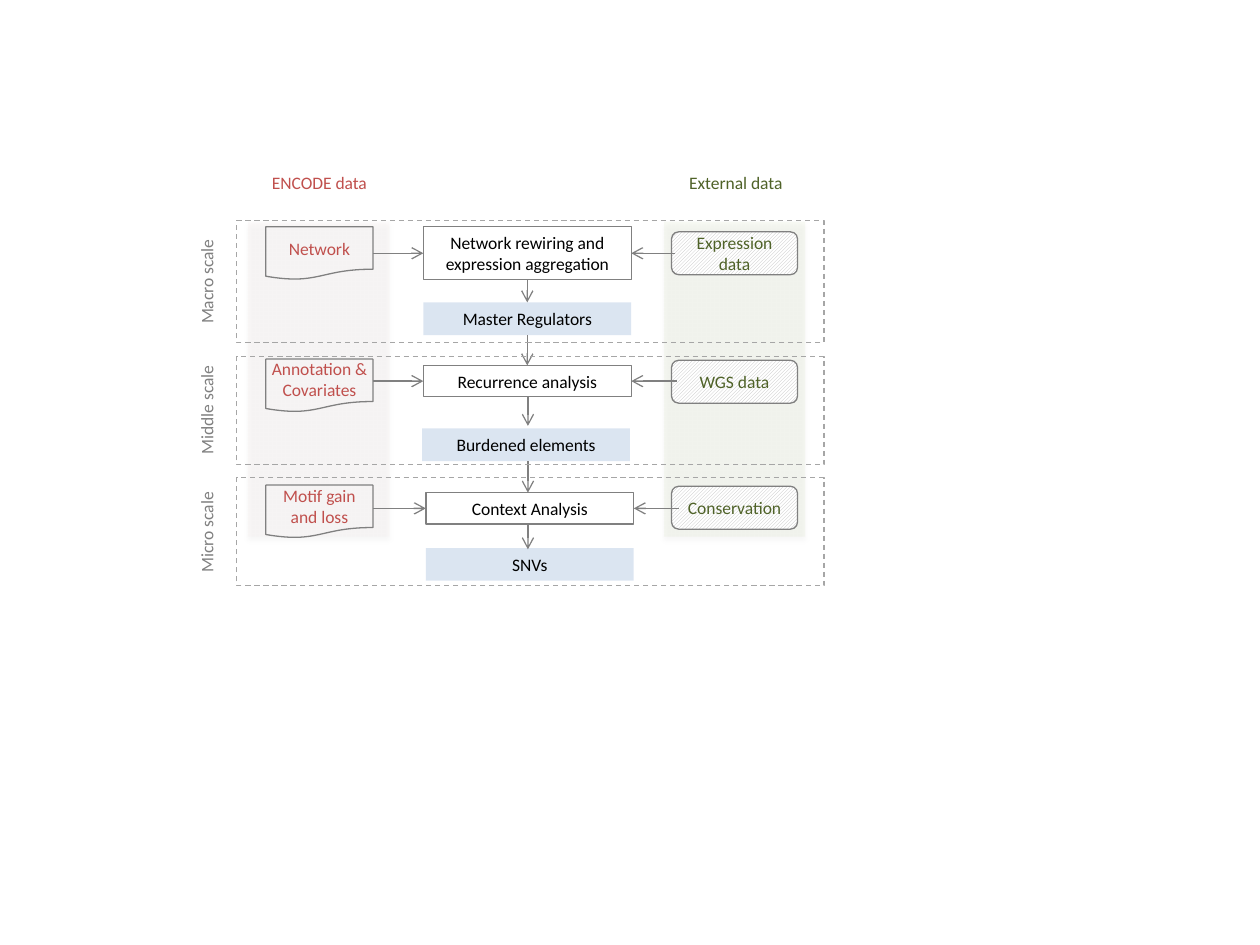
from dataclasses import dataclass
from typing import Optional

from lxml.etree import SubElement
from pptx import Presentation
from pptx.dml.color import RGBColor
from pptx.enum.dml import MSO_LINE, MSO_PATTERN
from pptx.enum.shapes import MSO_CONNECTOR, MSO_SHAPE
from pptx.enum.text import MSO_ANCHOR, MSO_AUTO_SIZE, PP_ALIGN
from pptx.oxml.ns import qn
from pptx.shapes.autoshape import Shape
from pptx.util import Inches, Pt

BLACK = RGBColor(0, 0, 0)
WHITE = RGBColor(255, 255, 255)
RED = RGBColor(0xC0, 0x50, 0x4D)
GREEN = RGBColor(0x4F, 0x62, 0x28)
GRAY = RGBColor(0x80, 0x80, 0x80)
SILVER = RGBColor(0xA6, 0xA6, 0xA6)
HATCH = RGBColor(0xBF, 0xBF, 0xBF)
BLUE = RGBColor(0xB9, 0xCD, 0xE5)
ROSE = RGBColor(0xF2, 0xDC, 0xDB)
LIME = RGBColor(0xC3, 0xD6, 0x9B)

TOP, LEFT, BOTTOM, RIGHT = range(4)
MID = 4.19
WIDE = 1.65


@dataclass(frozen=True)
class Area:
    x: float
    y: float
    w: float
    h: float


@dataclass(frozen=True)
class Scale:
    name: str
    name_y: float
    frame: Area
    step: str
    step_at: Area
    result: str
    result_at: Area
    source: tuple[str, ...]
    source_at: Area
    doc_y: float
    outer: str
    outer_y: float
    outer_end: float


SCALES = [
    Scale("Macro scale", 2.1, Area(1.88, 1.75, 4.66, 0.97),
          "Network rewiring and expression aggregation", Area(3.36, 1.8, WIDE, 0.42),
          "Master Regulators", Area(3.36, 2.4, WIDE, 0.26),
          ("Network",), Area(2.11, 1.84, 0.85, 0.27), 1.8,
          "Expression data", 1.84, 5.36),
    Scale("Middle scale", 3.12, Area(1.88, 2.83, 4.66, 0.86),
          "Recurrence analysis", Area(3.36, 2.9, WIDE, 0.25),
          "Burdened elements", Area(3.35, 3.4, WIDE, 0.26),
          ("Annotation &", "Covariates"), Area(2.04, 2.79, 0.99, 0.44), 2.85,
          "WGS data", 2.86, 5.37),
    Scale("Micro scale", 4.09, Area(1.88, 3.79, 4.66, 0.86),
          "Context Analysis", Area(3.38, 3.91, WIDE, 0.25),
          "SNVs", Area(3.38, 4.35, WIDE, 0.26),
          ("Motif gain and loss",), Area(2.11, 3.8, 0.85, 0.44), 3.85,
          "Conservation", 3.86, 5.39),
]

deck = Presentation()
deck.slide_width, deck.slide_height = Inches(10), Inches(7.5)
slide = deck.slides.add_slide(deck.slide_layouts[6])
shapes = slide.shapes


def write(shape: Shape, lines: tuple[str, ...], color: RGBColor) -> None:
    frame = shape.text_frame
    for i, line in enumerate(lines):
        para = frame.paragraphs[0] if i == 0 else frame.add_paragraph()
        para.alignment = PP_ALIGN.CENTER
        run = para.add_run()
        run.text = line
        run.font.size = Pt(10)
        run.font.name = "Calibri"
        run.font.color.rgb = color


def draw(kind: MSO_SHAPE, at: Area, edge: Optional[RGBColor] = None,
         text: str = "", ink: RGBColor = BLACK) -> Shape:
    shape = shapes.add_shape(kind, Inches(at.x), Inches(at.y), Inches(at.w), Inches(at.h))
    shape.shadow.inherit = False
    shape.fill.background()
    if edge is None:
        shape.line.fill.background()
    else:
        shape.line.color.rgb = edge
        shape.line.width = Pt(0.75)
    if text:
        shape.text_frame.word_wrap = True
        shape.text_frame.vertical_anchor = MSO_ANCHOR.MIDDLE
        write(shape, (text,), ink)
    return shape


def tint(shape: Shape, color: RGBColor, share: int) -> None:
    shape.fill.solid()
    shape.fill.fore_color.rgb = color
    tone = shape.fill._xPr.find(qn("a:solidFill"))[0]
    SubElement(tone, qn("a:alpha"), val=str(share * 1000))


def band(x: float, color: RGBColor) -> None:
    shape = draw(MSO_SHAPE.RECTANGLE, Area(x, 1.76, 1.12, 2.5))
    tint(shape, color, 10)
    effects = shape._element.spPr.find(qn("a:effectLst"))
    shade = SubElement(effects, qn("a:outerShdw"), blurRad=str(Pt(3.1)),
                       dist=str(Pt(1.8)), dir="5400000", rotWithShape="0")
    tone = SubElement(shade, qn("a:srgbClr"), val="000000")
    SubElement(tone, qn("a:alpha"), val="35000")


def label(lines: tuple[str, ...], at: Area, color: RGBColor,
          wrap: bool = True, turn: int = 0) -> None:
    box = shapes.add_textbox(Inches(at.x), Inches(at.y), Inches(at.w), Inches(at.h))
    box.text_frame.word_wrap = wrap
    box.text_frame.auto_size = MSO_AUTO_SIZE.SHAPE_TO_FIT_TEXT
    box.rotation = turn
    write(box, lines, color)


def arrow(x1: float, y1: float, x2: float, y2: float,
          start: Optional[tuple[Shape, int]] = None,
          end: Optional[tuple[Shape, int]] = None) -> None:
    line = shapes.add_connector(MSO_CONNECTOR.STRAIGHT, Inches(x1), Inches(y1),
                                Inches(x2), Inches(y2))
    if start:
        line.begin_connect(*start)
    if end:
        line.end_connect(*end)
    line.line.color.rgb = GRAY
    line.line.width = Pt(0.75)
    SubElement(line.line._get_or_add_ln(), qn("a:tailEnd"), type="arrow")
    SubElement(line._element.spPr, qn("a:effectLst"))


band(1.97, ROSE)
band(5.27, LIME)

steps: list[Shape] = []
results: list[Shape] = []
for row in SCALES:
    result = draw(MSO_SHAPE.RECTANGLE, row.result_at, None, row.result)
    tint(result, BLUE, 50)
    step = draw(MSO_SHAPE.RECTANGLE, row.step_at, GRAY, row.step)
    steps.append(step)
    results.append(result)

    doc = draw(MSO_SHAPE.FLOWCHART_DOCUMENT, Area(2.11, row.doc_y, 0.85, 0.42), GRAY)
    label(row.source, row.source_at, RED)
    outer = draw(MSO_SHAPE.FLOWCHART_ALTERNATE_PROCESS, Area(5.33, row.outer_y, 1, 0.34),
                 GRAY, row.outer, GREEN)
    outer.fill.patterned()
    outer.fill.pattern = MSO_PATTERN.LIGHT_UPWARD_DIAGONAL
    outer.fill.fore_color.rgb = HATCH
    outer.fill.back_color.rgb = WHITE

    at = row.step_at
    y = at.y + at.h / 2
    joint = (doc, RIGHT) if row is SCALES[0] else None
    arrow(2.96, y, at.x, y, joint, (step, LEFT))
    arrow(row.outer_end, y, at.x + at.w, y, None, (step, RIGHT))

arrow(MID, 2.22, MID, 2.4, (steps[0], BOTTOM), (results[0], TOP))
arrow(MID, 2.66, MID, 2.9, (results[0], BOTTOM), (steps[1], TOP))
for y1, y2 in ((3.15, 3.38), (3.66, 3.91), (4.16, 4.36)):
    arrow(MID, y1, MID, y2)

label(("ENCODE data",), Area(2.05, 1.32, 0.97, 0.27), RED, wrap=False)
label(("External data",), Area(5.36, 1.32, 0.96, 0.27), GREEN, wrap=False)

for row in SCALES:
    frame = draw(MSO_SHAPE.RECTANGLE, row.frame, SILVER)
    frame.line.dash_style = MSO_LINE.DASH
    label((row.name,), Area(1.15, row.name_y, 0.98, 0.27), GRAY, turn=270)

deck.save("out.pptx")
